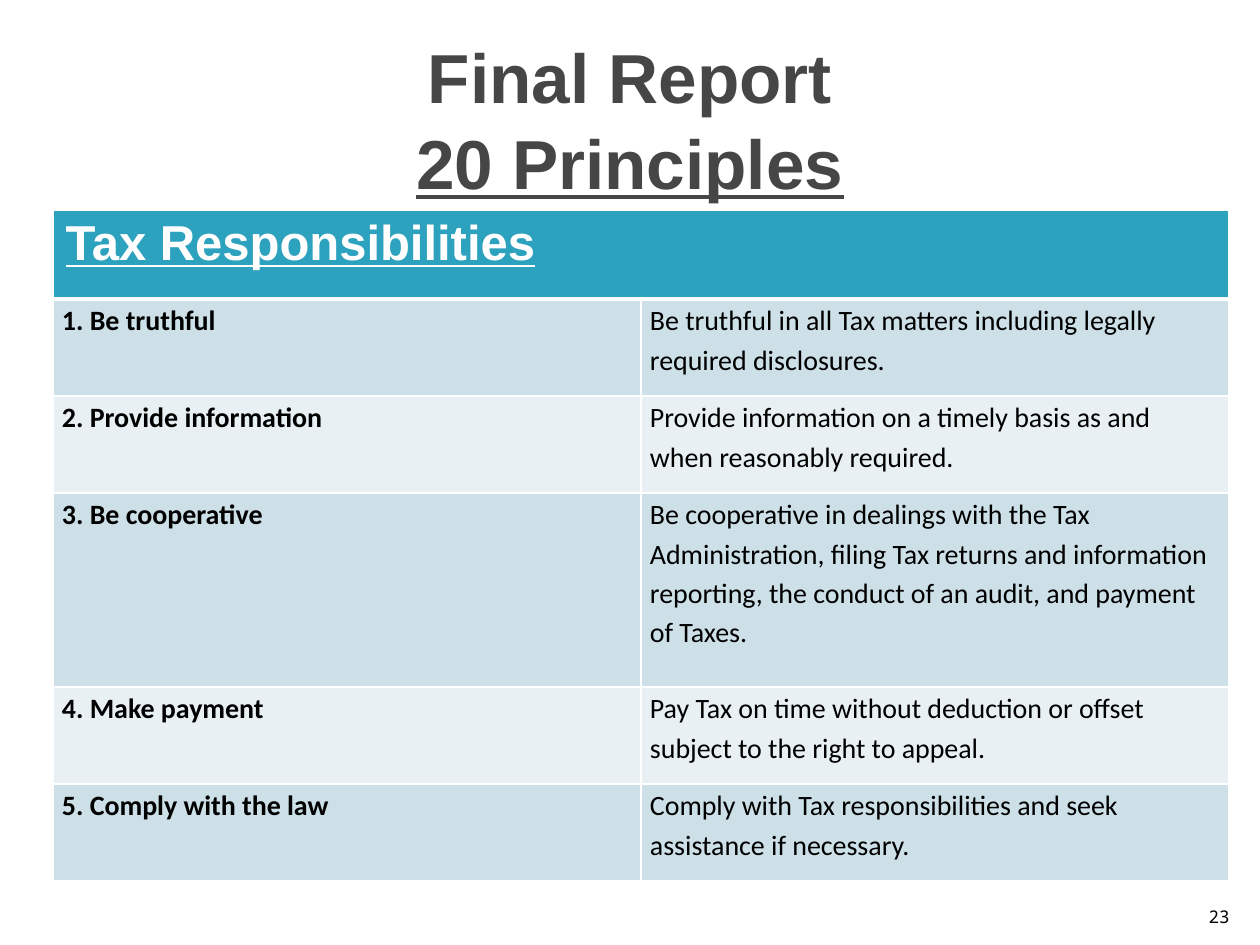
from dataclasses import dataclass

from lxml import etree
from pptx import Presentation
from pptx import util as u
from pptx.dml.color import RGBColor
from pptx.enum import text as t
from pptx.oxml import ns


@dataclass(frozen=True)
class Theme:
    """Colours, fonts and type sizes of the slide."""
    title: str = "464646"
    ink: str = "000000"
    paper: str = "FFFFFF"
    header: str = "2DA2BF"
    bands: tuple = ("CDE0E8", "E8F0F4")
    display: str = "Arial"
    body: str = "Calibri"
    number: str = "Noto Sans Mono"
    title_size: float = 39.6
    header_size: int = 28
    body_size: int = 16
    number_size: int = 10


THEME = Theme()
HEADING = "Tax Responsibilities"
PRINCIPLES = [
    ("Be truthful", "Be truthful in all Tax matters including legally required disclosures.", 97),
    ("Provide information",
     "Provide information on a timely basis as and when reasonably required.", 97),
    ("Be cooperative",
     "Be cooperative in dealings with the Tax Administration, filing Tax returns and "
     "information reporting, the conduct of an audit, and payment of Taxes.", 194),
    ("Make payment",
     "Pay Tax on time without deduction or offset subject to the right to appeal.", 97),
    ("Comply with the law",
     "Comply with Tax responsibilities and seek assistance if necessary.", 97),
]


def px(length):
    """Turn px at 126 to the inch into EMU."""
    return u.Emu(round(length * 914400 / 126))


def write(paragraph, words, *, font, size, color, bold=False, underline=False,
          align=t.PP_ALIGN.LEFT, spacing=1.0):
    """Add formatted words to a paragraph."""
    paragraph.alignment = align
    paragraph.line_spacing = spacing
    run = paragraph.add_run()
    run.text = words
    run.font.name = font
    run.font.size = u.Pt(size)
    run.font.bold = bold
    run.font.underline = underline
    run.font.color.rgb = RGBColor.from_string(color)


def add_frame(slide, box, anchor):
    """Place a wrapping text box and return its text frame."""
    frame = slide.shapes.add_textbox(*map(px, box)).text_frame
    frame.word_wrap = True
    frame.vertical_anchor = anchor
    return frame


def add_title(slide, box):
    """Place the two-line title in its box."""
    heading = add_frame(slide, box, t.MSO_ANCHOR.MIDDLE).paragraphs[0]
    style = dict(font=THEME.display, size=THEME.title_size, color=THEME.title,
                 bold=True, align=t.PP_ALIGN.CENTER, spacing=1.04)
    write(heading, "Final Report", **style)
    heading.add_line_break()
    write(heading, "20 Principles", underline=True, **style)


def style_cell(cell, fill, **widths):
    """Give a cell its borders and its fill."""
    properties = cell._tc.get_or_add_tcPr()
    for side in "LRTB":
        width = u.Pt(widths.get(side, 1))
        line = etree.SubElement(properties, ns.qn(f"a:ln{side}"), w=str(width))
        solid = etree.SubElement(line, ns.qn("a:solidFill"))
        etree.SubElement(solid, ns.qn("a:srgbClr"), val=THEME.paper)
    cell.fill.solid()
    cell.fill.fore_color.rgb = RGBColor.from_string(fill)


def add_principles(slide, box, header_height):
    """Place the table of principles under its merged heading."""
    table = slide.shapes.add_table(len(PRINCIPLES) + 1, 2, *map(px, box)).table
    for column in table.columns:
        column.width = px(box[2] // 2)
    table.rows[0].height = px(header_height)
    header = table.cell(0, 0)
    header.merge(table.cell(0, 1))
    for column in range(2):
        style_cell(table.cell(0, column), THEME.header, B=3)
    write(header.text_frame.paragraphs[0], HEADING, font=THEME.display,
          size=THEME.header_size, color=THEME.paper, bold=True, underline=True)

    for row, (name, duty, height) in enumerate(PRINCIPLES, 1):
        table.rows[row].height = px(height)
        for column, words in enumerate((f"{row}. {name}", duty)):
            cell = table.cell(row, column)
            style_cell(cell, THEME.bands[(row - 1) % 2], T=3 if row == 1 else 1)
            cell.margin_left = cell.margin_right = px(9)
            cell.margin_top = cell.margin_bottom = 0
            write(cell.text_frame.paragraphs[0], words, font=THEME.body,
                  size=THEME.body_size, color=THEME.ink, bold=column == 0, spacing=1.15)


def add_page_number(slide, box):
    """Place the page number in its box."""
    frame = add_frame(slide, box, t.MSO_ANCHOR.BOTTOM)
    write(frame.paragraphs[0], "23", font=THEME.number, size=THEME.number_size,
          color=THEME.ink, align=t.PP_ALIGN.RIGHT)


def main():
    """Build and save the slide."""
    deck = Presentation()
    deck.slide_width, deck.slide_height = px(1260), px(945)
    slide = deck.slides.add_slide(deck.slide_layouts[6])
    add_page_number(slide, (1192, 883, 50, 50))
    add_title(slide, (63, 38, 1134, 158))
    add_principles(slide, (53, 210, 1176, 671), header_height=89)
    deck.save("out.pptx")


if __name__ == "__main__":
    main()
